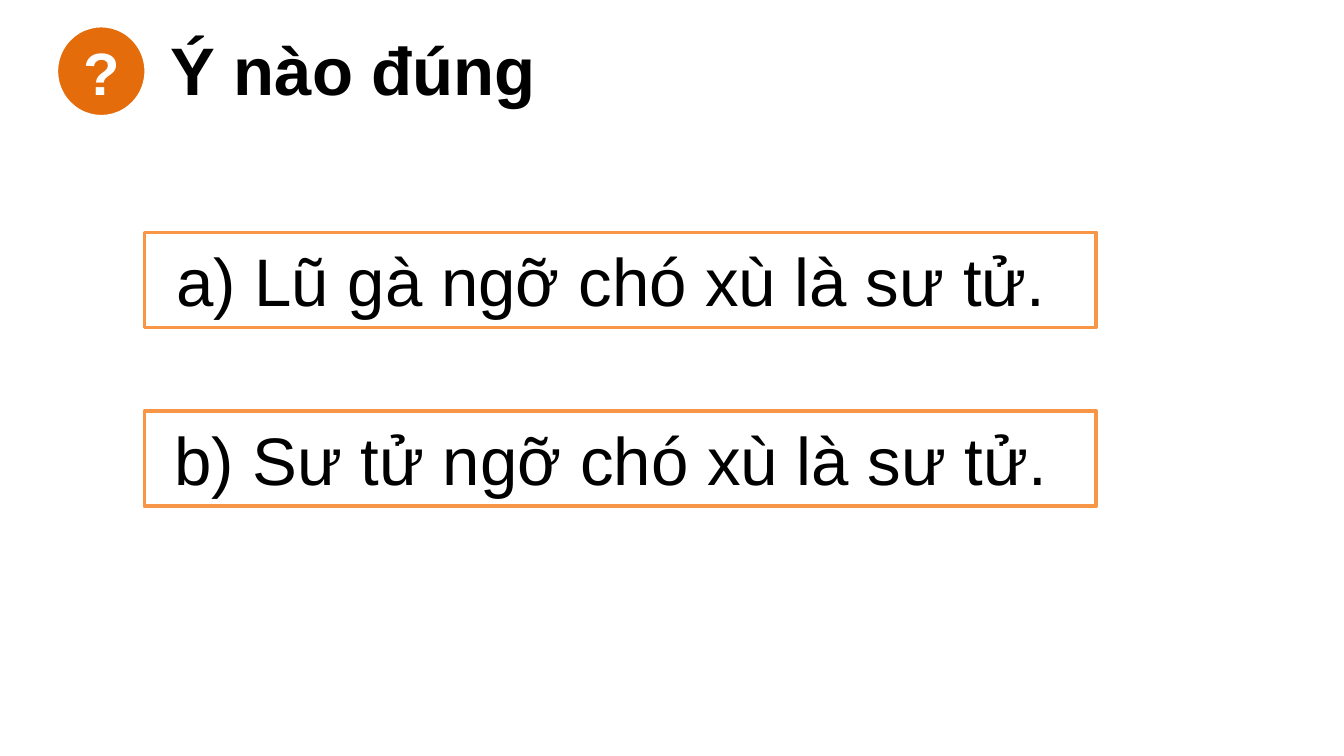
from dataclasses import dataclass

from pptx import Presentation
from pptx.dml.color import RGBColor
from pptx.enum.shapes import MSO_SHAPE
from pptx.enum.text import MSO_ANCHOR, MSO_AUTO_SIZE, PP_ALIGN
from pptx.util import Pt


@dataclass(frozen=True)
class Theme:
    font: str = "Arial"
    white: RGBColor = RGBColor(0xFF, 0xFF, 0xFF)
    black: RGBColor = RGBColor(0, 0, 0)
    badge: RGBColor = RGBColor(0xE4, 0x6C, 0x0A)
    border: RGBColor = RGBColor(0xF7, 0x96, 0x46)
    badge_size: int = 32
    text_size: int = 36
    line_width: int = 2


THEME = Theme()


def add_label(slide, box, text, size=THEME.text_size, color=THEME.black,
              fill=THEME.white, line=None, bold=False,
              align=PP_ALIGN.CENTER, geometry=MSO_SHAPE.RECTANGLE):
    label = slide.shapes.add_shape(geometry, *(Pt(length) for length in box))
    label.shadow.inherit = False
    label.fill.solid()
    label.fill.fore_color.rgb = fill
    if line is None:
        label.line.fill.background()
    else:
        label.line.color.rgb = line
        label.line.width = Pt(THEME.line_width)

    frame = label.text_frame
    frame.word_wrap = True
    frame.vertical_anchor = MSO_ANCHOR.TOP
    frame.text = text
    paragraph = frame.paragraphs[0]
    paragraph.alignment = align
    font = paragraph.runs[0].font
    font.name = THEME.font
    font.size = Pt(size)
    font.bold = bold
    font.color.rgb = color
    return label


def add_heading(slide, box, mark, title):
    left, top, width, height = box
    badge = add_label(slide, (left, top + 2.2, 48.2, 48.9), mark,
                      size=THEME.badge_size, color=THEME.white,
                      fill=THEME.badge, line=THEME.white, bold=True,
                      geometry=MSO_SHAPE.OVAL)
    badge.text_frame.vertical_anchor = MSO_ANCHOR.MIDDLE
    badge.text_frame.word_wrap = False
    title_offset = 54
    heading = add_label(slide, (left + title_offset, top, width - title_offset, height),
                        title, bold=True, align=PP_ALIGN.LEFT)
    heading.text_frame.auto_size = MSO_AUTO_SIZE.SHAPE_TO_FIT_TEXT


def add_answers(slide, box, answers, row_height=51):
    left, top, width, height = box
    pitch = (height - row_height) / (len(answers) - 1)
    for index, answer in enumerate(answers):
        row = add_label(slide, (left, top + index * pitch, width, row_height),
                        answer, line=THEME.border)
        row.text_frame.auto_size = MSO_AUTO_SIZE.SHAPE_TO_FIT_TEXT


def main():
    presentation = Presentation()
    presentation.slide_width = Pt(720)
    presentation.slide_height = Pt(405)
    slide = presentation.slides.add_slide(presentation.slide_layouts[6])
    add_heading(slide, (30.2, 11.5, 437.8, 51), "?", "Ý nào đúng")
    add_answers(slide, (77.4, 124.5, 509.8, 146.8),
                ["a) Lũ gà ngỡ chó xù là sư tử. ",
                 "b) Sư tử ngỡ chó xù là sư tử. "])
    presentation.save("out.pptx")


if __name__ == "__main__":
    main()
